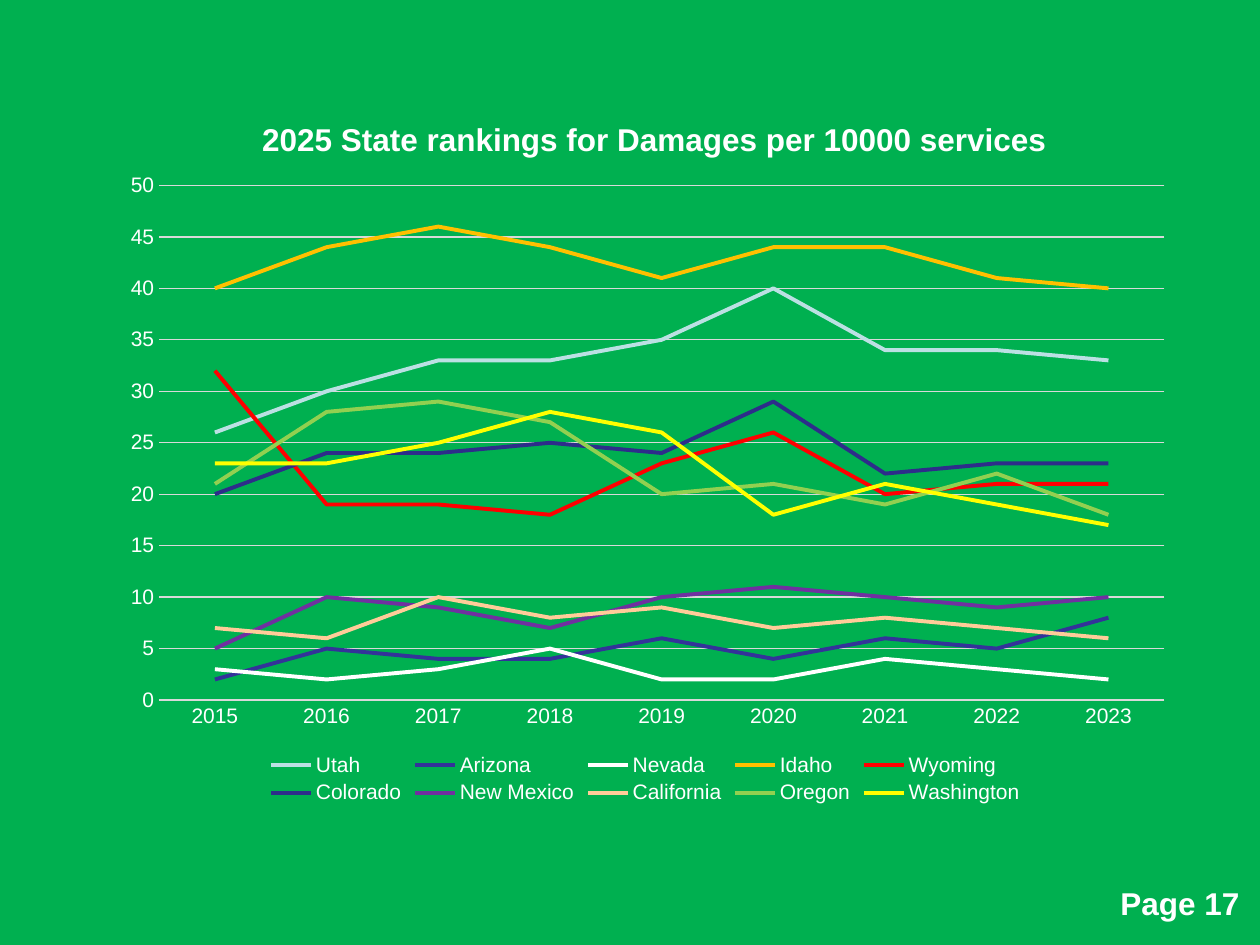
"""Build the page of state damage rankings with its line chart."""
from lxml import etree
from pptx import Presentation
from pptx.chart.data import CategoryChartData
from pptx.dml.color import RGBColor
from pptx.enum.chart import XL_CHART_TYPE, XL_LEGEND_POSITION, XL_TICK_MARK
from pptx.enum.text import MSO_AUTO_SIZE
from pptx.oxml.ns import qn
from pptx.util import Pt

LINE = XL_CHART_TYPE.LINE
BOTTOM = XL_LEGEND_POSITION.BOTTOM
NO_TICK = XL_TICK_MARK.NONE
GROW = MSO_AUTO_SIZE.SHAPE_TO_FIT_TEXT
PX = 914400 // 126
FONT = "Arial"
COLORS = {
    "back": "00B050", "text": "FFFFFF", "grid": "D9D9D9",
    "Utah": "BBE0E3", "Arizona": "333399", "Nevada": "FFFFFF",
    "Idaho": "FFC000", "Wyoming": "FF0000", "Colorado": "2D2D8A",
    "New Mexico": "7030A0", "California": "FFCC99", "Oregon": "92D050",
    "Washington": "FFFF00",
}
YEARS = [str(year) for year in range(2015, 2024)]
RANKS = {
    "Utah": (26, 30, 33, 33, 35, 40, 34, 34, 33),
    "Arizona": (2, 5, 4, 4, 6, 4, 6, 5, 8),
    "Nevada": (3, 2, 3, 5, 2, 2, 4, 3, 2),
    "Idaho": (40, 44, 46, 44, 41, 44, 44, 41, 40),
    "Wyoming": (32, 19, 19, 18, 23, 26, 20, 21, 21),
    "Colorado": (20, 24, 24, 25, 24, 29, 22, 23, 23),
    "New Mexico": (5, 10, 9, 7, 10, 11, 10, 9, 10),
    "California": (7, 6, 10, 8, 9, 7, 8, 7, 6),
    "Oregon": (21, 28, 29, 27, 20, 21, 19, 22, 18),
    "Washington": (23, 23, 25, 28, 26, 18, 21, 19, 17),
}


def place(node, index, **spots):
    """Give a chart part a manual layout in fractions of the chart."""
    old = node.find(qn("c:layout"))
    if old is not None:
        node.remove(old)
    layout = etree.Element(qn("c:layout"))
    manual = etree.SubElement(layout, qn("c:manualLayout"))
    for tag, value in spots.items():
        etree.SubElement(manual, qn(f"c:{tag}")).set("val", str(value))
    node.insert(index, layout)


class Page:
    """Hold the style and the current slide."""

    def __init__(self, deck):
        """Add a blank slide with the page colour."""
        self.slide = deck.slides.add_slide(deck.slide_layouts[6])
        fill = self.slide.background.fill
        fill.solid()
        fill.fore_color.rgb = self.color("back")

    def color(self, name):
        """Return a named colour."""
        return RGBColor.from_string(COLORS[name])

    def style(self, font, size, bold=False):
        """Set the shared font."""
        font.name, font.size, font.bold = FONT, Pt(size), bold
        font.color.rgb = self.color("text")

    def stroke(self, line, name, width):
        """Set the colour and width of a line."""
        line.color.rgb = self.color(name)
        line.width = Pt(width)

    def label(self, text, *box):
        """Add a bold line of text."""
        frame = self.slide.shapes.add_textbox(*(n * PX for n in box)).text_frame
        frame.word_wrap, frame.auto_size = False, GROW
        para = frame.paragraphs[0]
        para.text = text
        self.style(para.font, 18, True)

    def chart(self, title, cats, rows, *box):
        """Add a line chart with one line for each row."""
        data = CategoryChartData()
        data.categories = cats
        for name, vals in rows.items():
            data.add_series(name, vals)
        chart = self.slide.shapes.add_chart(
            LINE, *(n * PX for n in box), data).chart
        self.style(chart.font, 12)
        para = chart.chart_title.text_frame.paragraphs[0]
        para.text = title
        self.style(para.font, 18, True)
        place(chart.chart_title._element, 1,
              xMode="edge", yMode="edge", x=0.14, y=0.04)
        place(chart._chartSpace.chart.plotArea, 0, layoutTarget="inner",
              xMode="edge", yMode="edge", x=0.05, y=0.14, w=0.93, h=0.71)
        self.axes(chart)
        chart.has_legend = True
        chart.legend.position = BOTTOM
        chart.legend.include_in_layout = False
        self.style(chart.legend.font, 12)
        chart.plots[0].vary_by_categories = False
        for row in chart.plots[0].series:
            row.smooth = False
            self.stroke(row.format.line, row.name, 2.25)

    def axes(self, chart):
        """Style both axes and the grid."""
        cat, val = chart.category_axis, chart.value_axis
        for axis in (cat, val):
            axis.major_tick_mark = axis.minor_tick_mark = NO_TICK
            self.style(axis.tick_labels.font, 12)
        val.minimum_scale, val.maximum_scale, val.major_unit = 0, 50, 5
        val.format.line.fill.background()
        self.stroke(cat.format.line, "grid", 0.75)
        self.stroke(val.major_gridlines.format.line, "grid", 0.75)


def main():
    """Build and save the deck."""
    deck = Presentation()
    deck.slide_width, deck.slide_height = 1260 * PX, 945 * PX
    page = Page(deck)
    page.label("Page 17", 1108, 878, 147, 50)
    page.chart("2025 State rankings for Damages per 10000 services",
               YEARS, RANKS, 105, 84, 1081, 725)
    deck.save("out.pptx")


if __name__ == "__main__":
    main()
